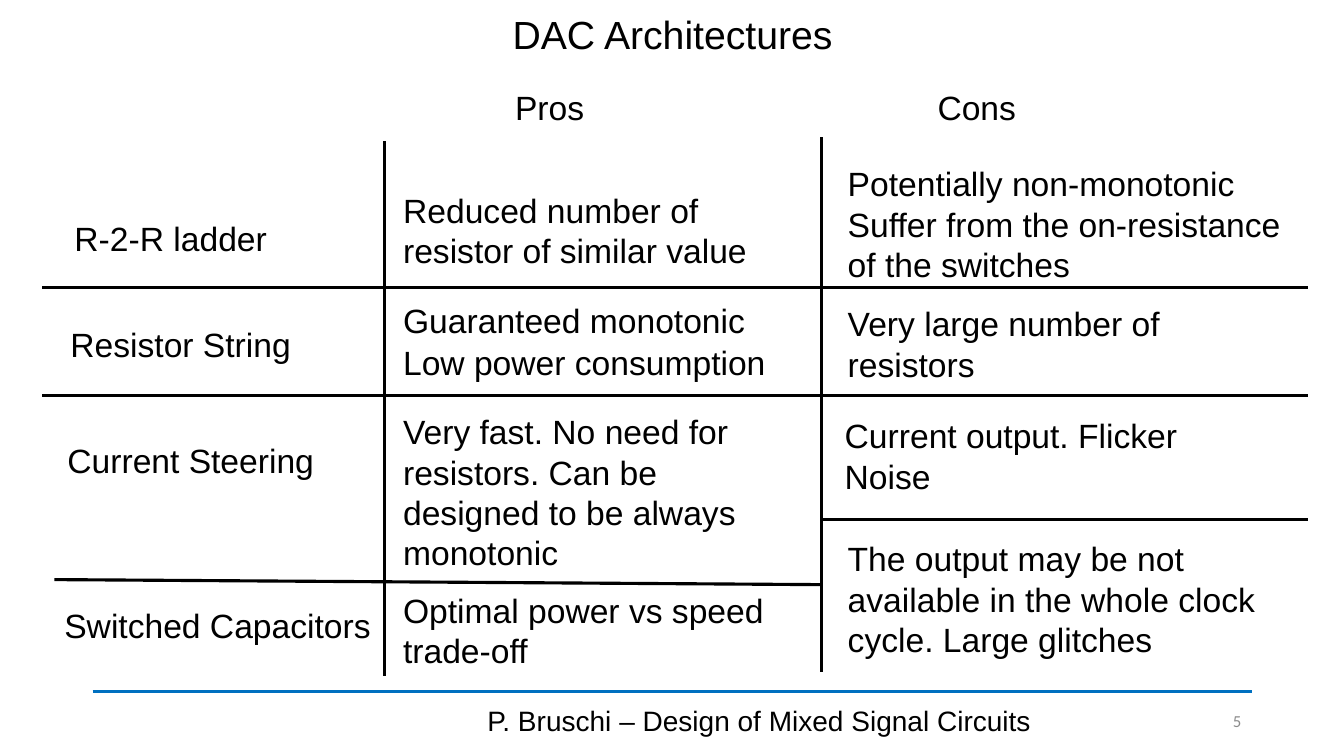
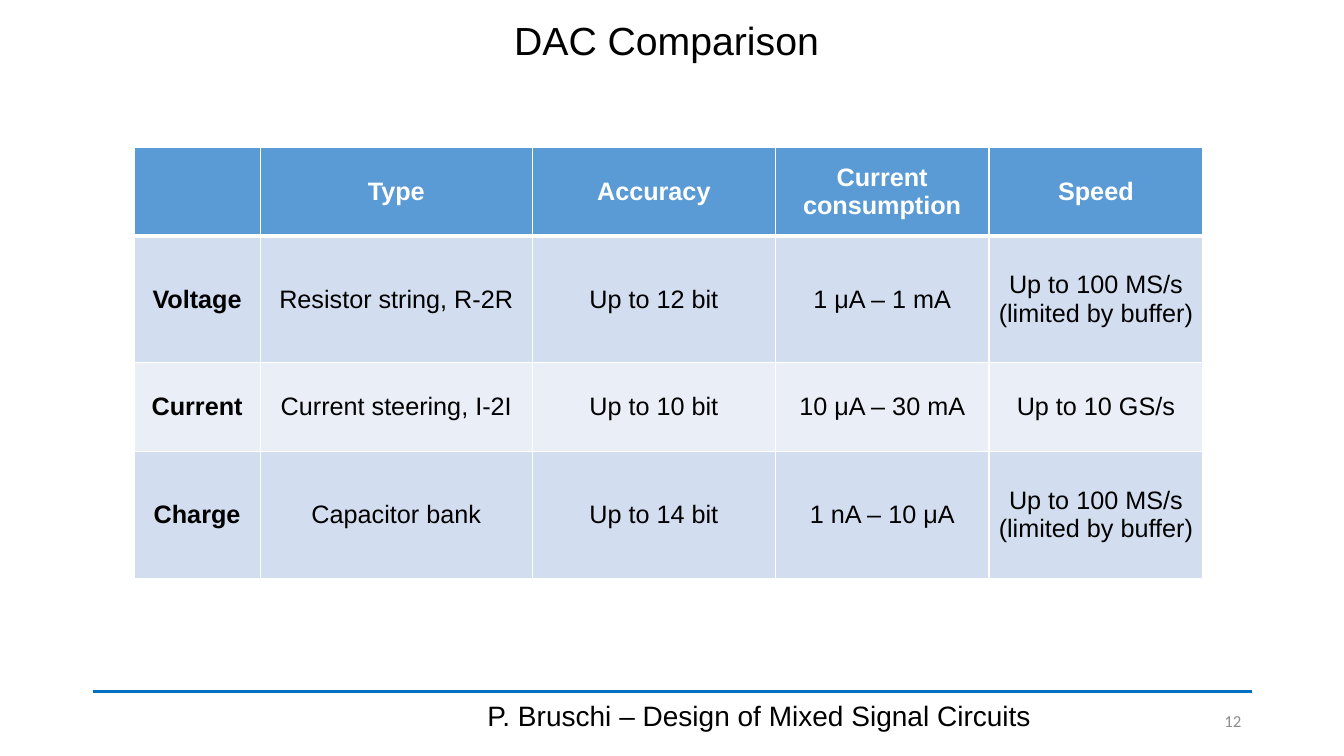
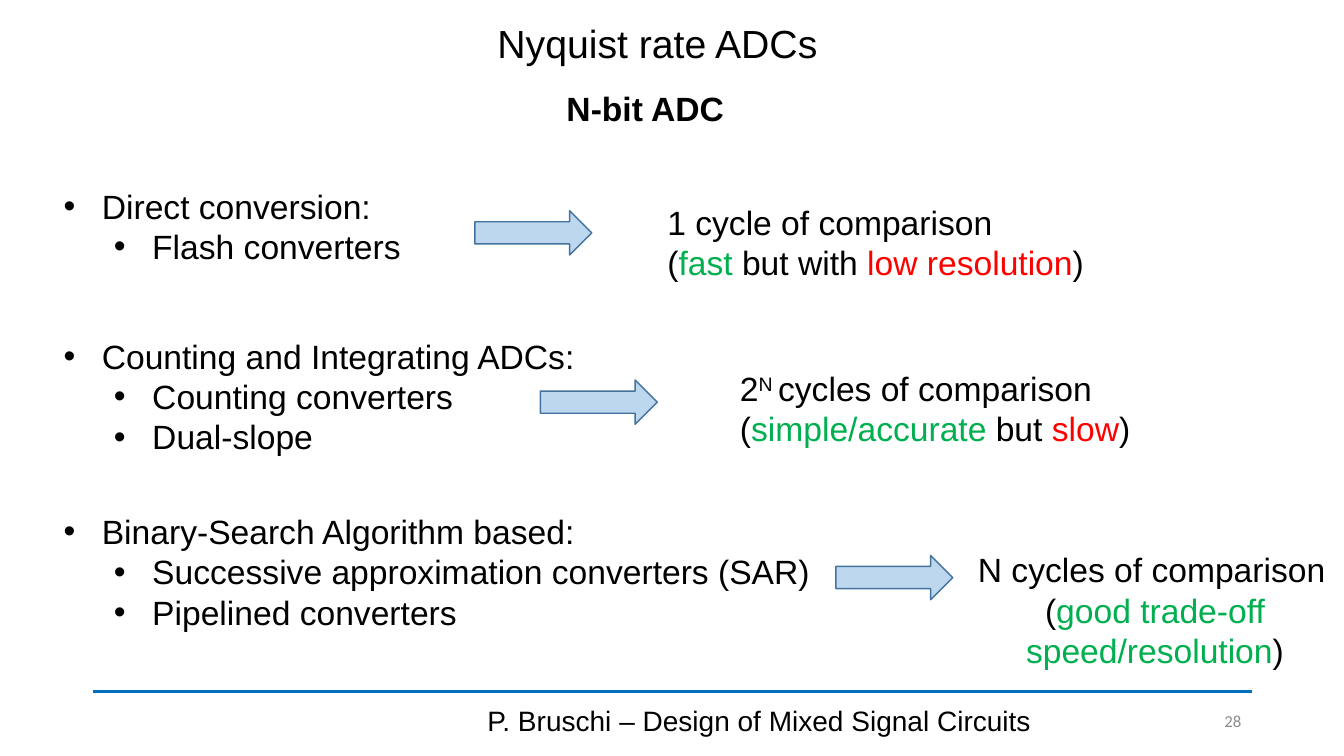
from lxml import etree
from pptx import Presentation, util as u
from pptx.dml.color import RGBColor
from pptx.enum import shapes, text
from pptx.oxml import ns

COLORS = {
    "black": "000000", "white": "FFFFFF", "rule": "0070C0", "number": "8C8C8C",
    "header": "5B9BD5", "band_dark": "D2DEEF", "band_light": "EAEFF7",
    "arrow": "BDD7EE", "arrow_line": "43739E", "good": "00B050", "bad": "FF0000",
}
ALIGN = {"l": text.PP_ALIGN.LEFT, "c": text.PP_ALIGN.CENTER, "r": text.PP_ALIGN.RIGHT}
TITLE_ONLY, COMPARISON = 5, 4
FOOTER = "P. Bruschi – Design of Mixed Signal Circuits"


def rgb(name):
    return RGBColor.from_string(COLORS[name])


def inches(values):
    return [u.Inches(v) for v in values]


def place(sp, box):
    sp.left, sp.top, sp.width, sp.height = inches(box)


def write(tf, paras, size=24, font="Arial", color="black", bold=False, align="l",
          spacing=1.0):
    """Fill a text frame; a paragraph is a string or a list of strings and
    (text, colour or "super") pairs."""
    for i, runs in enumerate([paras] if isinstance(paras, str) else paras):
        p = tf.paragraphs[0] if i == 0 else tf.add_paragraph()
        p.alignment = ALIGN[align[min(i, len(align) - 1)]]
        p.line_spacing = spacing
        p.space_before = u.Pt(0)
        for run in [runs] if isinstance(runs, str) else runs:
            words, style = (run, color) if isinstance(run, str) else run
            r = p.add_run()
            r.text = words
            r.font.size, r.font.name, r.font.bold = u.Pt(size), font, bold
            r.font.color.rgb = rgb(color if style == "super" else style)
            if style == "super":
                r.font._element.set("baseline", "30000")


def textbox(s, box, paras, wrap=True, anchor="TOP", **fmt):
    tf = s.shapes.add_textbox(*inches(box)).text_frame
    tf.word_wrap = wrap
    tf.vertical_anchor = text.MSO_ANCHOR[anchor]
    write(tf, paras, **fmt)


def line(s, start, end, color="black", width=2.25):
    c = s.shapes.add_connector(shapes.MSO_CONNECTOR.STRAIGHT, *inches(start + end))
    c.line.color.rgb = rgb(color)
    c.line.width = u.Pt(width)
    etree.SubElement(c._element.spPr, ns.qn("a:effectLst"))


def right_arrow(s, x, y):
    sp = s.shapes.add_shape(shapes.MSO_SHAPE.RIGHT_ARROW, *inches((x, y, 1.16, 0.44)))
    sp.shadow.inherit = False
    sp.fill.solid()
    sp.fill.fore_color.rgb = rgb("arrow")
    sp.line.color.rgb = rgb("arrow_line")
    sp.line.width = u.Pt(1)


def bullet_list(sp, box, items):
    """Write a heading bullet followed by second-level bullets."""
    place(sp, box)
    tf = sp.text_frame
    tf.auto_size = text.MSO_AUTO_SIZE.NONE
    tf.vertical_anchor = text.MSO_ANCHOR.TOP
    write(tf, items)
    for i, p in enumerate(tf.paragraphs):
        p.level = min(i, 1)
        pPr = p._p.get_or_add_pPr()
        pPr.set("marL", str(u.Inches(0.88 if i else 0.38)))
        pPr.set("indent", str(u.Inches(-0.38)))
        etree.SubElement(pPr, ns.qn("a:buFont"), typeface="Arial")
        etree.SubElement(pPr, ns.qn("a:buChar"), char="•")


def cell_borders(cell, **widths):
    tcPr = cell._tc.get_or_add_tcPr()
    for i, side in enumerate("LRTB"):
        ln = etree.Element(ns.qn("a:ln" + side), w=str(u.Pt(widths.get(side, 1))))
        fill = etree.SubElement(ln, ns.qn("a:solidFill"))
        etree.SubElement(fill, ns.qn("a:srgbClr"), val=COLORS["white"])
        tcPr.insert(i, ln)


def table(s, box, col_widths, row_heights, rows):
    tbl = s.shapes.add_table(len(rows), len(col_widths), *inches(box)).table
    for col, width in zip(tbl.columns, col_widths):
        col.width = u.Inches(width)
    for i, (row, height, values) in enumerate(zip(tbl.rows, row_heights, rows)):
        row.height = u.Inches(height)
        for j, (cell, value) in enumerate(zip(row.cells, values)):
            cell.vertical_anchor = text.MSO_ANCHOR.MIDDLE
            cell.fill.solid()
            band = "band_dark" if i % 2 else "band_light"
            cell.fill.fore_color.rgb = rgb(band if i else "header")
            if i:
                cell.margin_left = cell.margin_right = 0
                cell.margin_top = cell.margin_bottom = 0
            cell_borders(cell, **{0: {"B": 3}, 1: {"T": 3}}.get(i, {}))
            if value:
                write(cell.text_frame, value, size=18, align="c",
                      bold=i == 0 or j == 0, color="black" if i else "white")


def new_slide(prs, layout, title, number, title_at, footer_top=6.95):
    s = prs.slides.add_slide(prs.slide_layouts[layout])
    line(s, (0.92, 6.86), (12.42, 6.86), "rule", 2.75)
    sp = s.shapes.title
    place(sp, (*title_at, 11.5, 0.72))
    sp.text_frame.auto_size = text.MSO_AUTO_SIZE.NONE
    sp.text_frame.vertical_anchor = text.MSO_ANCHOR.MIDDLE
    write(sp.text_frame, title, size=28, align="c", spacing=0.9)
    textbox(s, (4.42, footer_top, 6.22, 0.4), FOOTER, anchor="MIDDLE", size=20, align="c")
    textbox(s, (11.45, 6.95, 0.96, 0.4), number, anchor="MIDDLE", size=12,
            font="Calibri", color="number", align="r")
    return s


def architectures(prs):
    s = new_slide(prs, TITLE_ONLY, "DAC Architectures", "5", (0.92, 0))
    labels = [
        (0.64, 2.11, 2.32, "R-2-R ladder"), (0.6, 3.16, 2.69, "Resistor String"),
        (0.57, 4.32, 3.05, "Current Steering"), (0.54, 5.95, 3.27, "Switched Capacitors"),
        (5.01, 0.81, 0.89, "Pros"), (9.2, 0.81, 0.99, "Cons"),
    ]
    for x, y, w, label in labels:
        textbox(s, (x, y, w, 0.5), label, wrap=False)

    pros = [
        (1.83, 0.91, ["Reduced number of", "resistor of similar value"]),
        (2.93, 0.5, "Guaranteed monotonic"),
        (3.34, 0.5, "Low power consumption"),
        (4.03, 1.72, "Very fast. No need for resistors. Can be designed to be always monotonic"),
        (5.8, 0.91, "Optimal power vs speed trade-off"),
    ]
    for y, h, paras in pros:
        textbox(s, (3.9, y, 3.94, h), paras)

    cons = [
        (8.31, 1.57, 4.67, 1.31, ["Potentially non-monotonic",
                                  "Suffer from the on-resistance of the switches"]),
        (8.31, 2.96, 3.94, 0.91, "Very large number of resistors"),
        (8.28, 4.07, 3.94, 0.91, "Current output. Flicker Noise"),
        (8.31, 5.29, 4.67, 1.31, "The output may be not available in the whole clock "
                                 "cycle. Large glitches"),
    ]
    for *box, paras in cons:
        textbox(s, box, paras)

    left, pros_x, cons_x, right = 0.42, 3.81, 8.15, 12.97
    line(s, (pros_x, 1.4), (pros_x, 6.71))
    line(s, (cons_x, 1.36), (cons_x, 6.67))
    for y in (2.85, 3.92):
        line(s, (left, y), (right, y))
    line(s, (0.54, 5.75), (cons_x, 5.8))
    line(s, (cons_x, 5.15), (right, 5.15))


def comparison(prs):
    s = new_slide(prs, TITLE_ONLY, "DAC Comparison", "12", (0.86, 0.06), footer_top=6.9)
    buffered = "Up to 100 MS/s (limited by buffer)"
    table(s, (1.33, 1.46, 10.6, 4.28), (1.25, 2.7, 2.41, 2.12, 2.12),
          (0.88, 1.26, 0.88, 1.26), [
        ("", "Type", "Accuracy", "Current consumption", "Speed"),
        ("Voltage", "Resistor string, R-2R", "Up to 12 bit", "1 μA – 1 mA", buffered),
        ("Current", "Current steering, I-2I", "Up to 10 bit", "10 μA – 30 mA",
         "Up to 10 GS/s"),
        ("Charge", "Capacitor bank", "Up to 14 bit", "1 nA – 10 μA", buffered),
    ])


def nyquist(prs):
    s = new_slide(prs, COMPARISON, "Nyquist rate ADCs", "28", (0.77, 0.09))
    families = [
        (1.79, 0.91, ["Direct conversion:", "Flash converters"]),
        (3.28, 1.31, ["Counting and Integrating ADCs:", "Counting converters", "Dual-slope"]),
        (5.02, 1.31, ["Binary-Search Algorithm based:",
                      "Successive approximation converters (SAR)",
                      "Pipelined converters"]),
    ]
    bodies = list(s.placeholders)[1:]
    for sp, (y, h, items) in zip(bodies, families):
        bullet_list(sp, (0.53, y, 8.92, h), items)
    for sp in bodies[len(families):]:
        sp._element.getparent().remove(sp._element)

    textbox(s, (5.52, 0.82, 4.32, 0.5), "N-bit ADC", bold=True)
    for x, y in ((4.71, 2.09), (5.36, 3.77), (8.29, 5.51)):
        right_arrow(s, x, y)

    textbox(s, (6.52, 1.95, 4.65, 0.91), [
        "1 cycle of comparison",
        ["(", ("fast ", "good"), "but with ", ("low resolution", "bad"), ")"]])
    textbox(s, (7.24, 3.6, 4.21, 0.91), [
        ["2", ("N ", "super"), "cycles of comparison"],
        ["(", ("simple/accurate ", "good"), "but ", ("slow", "bad"), ")"]])
    textbox(s, (9.6, 5.4, 3.71, 1.31), [
        "N cycles of comparison",
        ["(", ("good trade-off speed/resolution", "good"), ")"]], align="lc")


def main():
    prs = Presentation()
    prs.slide_width, prs.slide_height = inches((13.33, 7.5))
    architectures(prs)
    comparison(prs)
    nyquist(prs)
    prs.save("out.pptx")


if __name__ == "__main__":
    main()
